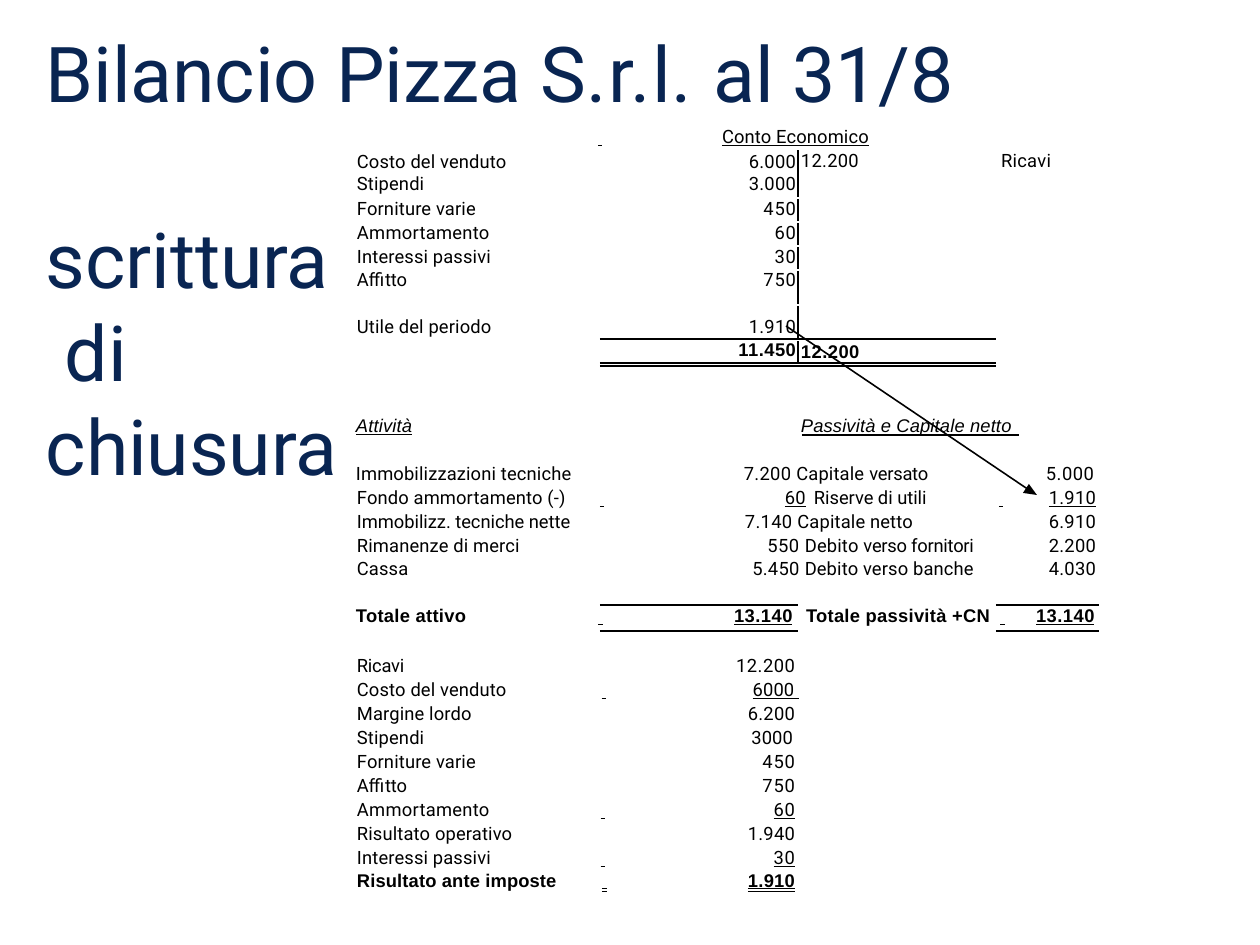
from dataclasses import dataclass

from lxml import etree
from pptx import Presentation
from pptx.dml.color import RGBColor
from pptx.enum.shapes import MSO_CONNECTOR as Conn
from pptx.enum.text import MSO_UNDERLINE as Line, PP_ALIGN as Al
from pptx.oxml.ns import qn
from pptx.util import Emu, Pt

COLORS = {"navy": "092552", "black": "000000"}


def px(n):
    """Turn pixels into EMU."""
    return Emu(round(n * 914400 / 126))


def rgb(name):
    """Look up a colour by name."""
    return RGBColor.from_string(COLORS[name])


@dataclass
class Cell:
    """Text of a table cell with its own layout."""
    text: object = ""
    spc: float = 0.1
    style: str = ""
    left: int = None
    right: int = None
    top: int = 0
    sb: float = 0.1
    tabs: tuple = ()
    align: object = None


class Sheet:
    """Style and current slide, with a method for each kind of element."""

    def __init__(self, slide):
        self.shapes = slide.shapes

    def fill(self, tf, text, size=10.5, color="black", style="", spc=0.1,
             align=Al.LEFT, ls=None, sb=1.4, tabs=()):
        """Write runs, given as a string or as (text, spacing, style) tuples."""
        paras = [text] if isinstance(text, list) else [[(t, spc, style)] for t in text.split("\n")]
        for i, runs in enumerate(paras):
            p = tf.paragraphs[0] if i == 0 else tf.add_paragraph()
            p.alignment, p.space_before = align, Pt(sb)
            if ls:
                p.line_spacing = Pt(ls)
            if tabs:
                lst = etree.SubElement(p._p.get_or_add_pPr(), qn("a:tabLst"))
                for pos in tabs:
                    etree.SubElement(lst, qn("a:tab"), pos=str(px(pos)), algn="l")
            p._p.get_or_add_endParaRPr().set("sz", str(int(size * 100)))
            for words, gap, marks in runs:
                if words:
                    self.run(p, words, gap, marks, size, color)

    def run(self, p, words, gap, marks, size, color):
        """Add one run; bold and italic text is in Arial."""
        r = p.add_run()
        r.text = words
        f = r.font
        f.size, f.color.rgb = Pt(size), rgb(color)
        f.name = "Arial" if set(marks) & set("bi") else "Roboto"
        f.bold, f.italic = "b" in marks, "i" in marks
        f.underline = Line.DOUBLE_LINE if "d" in marks else "u" in marks
        r._r.get_or_add_rPr().set("spc", str(round(gap * 100)))

    def box(self, x, y, w, h, text, top=2, **style):
        """Add a text box."""
        tf = self.shapes.add_textbox(px(x), px(y), px(w), px(h)).text_frame
        tf.word_wrap = True
        tf.margin_left, tf.margin_top = px(1), px(top)
        tf.margin_right = tf.margin_bottom = 0
        self.fill(tf, text, **style)

    def table(self, x, y, cols, rows, border=None):
        """Add a table; cols are (width, align, left, right), rows are (height, leading, cells)."""
        frame = self.shapes.add_table(len(rows), len(cols), px(x), px(y),
                                      px(sum(c[0] for c in cols)), px(sum(r[0] for r in rows)))
        tbl = frame.table
        tbl.first_row = tbl.horz_banding = False
        for col, (w, *_) in zip(tbl.columns, cols):
            col.width = px(w)
        for row, (h, ls, items) in zip(tbl.rows, rows):
            row.height = px(h)
            for j, (cell, item, (_, align, left, right)) in enumerate(zip(row.cells, items, cols)):
                c = item if isinstance(item, Cell) else Cell(item)
                cell.margin_left = px(left if c.left is None else c.left)
                cell.margin_right = px(right if c.right is None else c.right)
                cell.margin_top, cell.margin_bottom = px(c.top), 0
                self.fill(cell.text_frame, c.text, style=c.style, spc=c.spc, ls=ls, sb=c.sb,
                          align=c.align or align, tabs=c.tabs)
                if j == border:
                    self.right_border(cell)
                cell.fill.background()

    def right_border(self, cell):
        """Draw a thin line on the right of a cell."""
        ln = etree.SubElement(cell._tc.get_or_add_tcPr(), qn("a:lnR"), w=str(Pt(1)))
        solid = etree.SubElement(ln, qn("a:solidFill"))
        etree.SubElement(solid, qn("a:srgbClr"), val=COLORS["black"])

    def line(self, x1, y1, x2, y2):
        """Add a straight line."""
        sp = self.shapes.add_connector(Conn.STRAIGHT, px(x1), px(y1), px(x2), px(y2))
        sp.line.color.rgb, sp.line.width = rgb("black"), Pt(0.9)
        etree.SubElement(sp._element.spPr, qn("a:effectLst"))

    def polygon(self, start, *points):
        """Add a filled outline."""
        b = self.shapes.build_freeform(*start, scale=914400 / 126)
        b.add_line_segments(points, close=True)
        sp = b.convert_to_shape()
        sp.shadow.inherit = False
        sp.fill.solid()
        sp.fill.fore_color.rgb = rgb("black")
        sp.line.fill.background()


def main():
    """Build the slide."""
    prs = Presentation()
    prs.slide_width, prs.slide_height = px(1260), px(945)
    s = Sheet(prs.slides.add_slide(prs.slide_layouts[6]))

    big = dict(size=44, color="navy", sb=0.9)
    s.box(45, 25, 979, 96, [("Bilancio Pizza ", -0.1, ""), ("S.r.l. ", 0.6, ""),
                            ("al 31/8", -0.1, "")], top=1, **big)
    s.box(45, 117, 295, 373, "scrittura\n di\nchiusura", top=94, spc=-0.1, **big)

    s.table(353, 151, [(247, Al.LEFT, 4, 0), (198, Al.RIGHT, 0, 2)], [
        (47, 12.4, ["Costo del venduto\nStipendi", Cell("6.000\n3.000", 0.2)]),
        (24, 12.5, ["Forniture varie", Cell("450", 0.5)]),
        (24, 12.6, [Cell("Ammortamento", 0.2), Cell("60", 0.5)]),
        (24, 12.6, ["Interessi passivi", Cell("30", 0.5)]),
        (35, None, [Cell("Affitto", -0.1), Cell("750", 0.5)]),
        (35, 12.2, [Cell("Utile del periodo", top=12, sb=6.8),
                    Cell("1.910", 0.2, top=12, sb=6.8)]),
        (25, None, ["", Cell("11.450", 0.3, "b", sb=0.3)]),
    ], border=1)

    s.box(800, 147, 256, 26, "12.200\tRicavi", spc=0.2, tabs=(200,))
    s.box(800, 338, 70, 26, "12.200", style="b", spc=0.3)
    s.box(355, 412, 70, 26, "Attività", style="iu")
    s.box(800, 412, 230, 26, "Passività e Capitale netto", style="i")
    s.box(355, 460, 225, 26, "Immobilizzazioni tecniche")
    s.box(743, 460, 200, 26, [("7.200 ", 0.2, ""), ("Capitale ", 0.1, ""), ("versato", -0.1, "")])
    s.box(1045, 460, 56, 26, "5.000", spc=0.3)

    s.table(353, 488, [(234, Al.LEFT, 4, 0), (398, Al.RIGHT, 0, 11), (115, Al.RIGHT, 0, 4)], [
        (23, 11.8, ["Fondo ammortamento (-)",
                    Cell([(" \t60", 0.1, "u"), ("\tRiserve di utili", 0, "")],
                         left=13, tabs=(185, 214), align=Al.LEFT),
                    Cell([(" \t", 0, "u"), ("1.910", 0.2, "u")], tabs=(50,))]),
        (24, 12.6, [Cell("Immobilizz. tecniche nette", 0),
                    Cell([("7.140 ", 0.2, ""), ("Capitale netto", 0.1, "")],
                         left=158, align=Al.LEFT), Cell("6.910", 0.2)]),
        (24, 12.6, ["Rimanenze di merci",
                    Cell([("550 ", 0.3, ""), ("Debito ", 0.1, ""), ("verso fornitori", -0.1, "")]),
                    Cell("2.200", 0.2)]),
        (23, 11.8, ["Cassa", Cell([("5.450 ", 0.2, ""), ("Debito verso banche", 0.1, "")]),
                    Cell("4.030", 0.2)]),
    ])

    s.box(355, 602, 120, 26, "Totale attivo", style="b", spc=0.2)
    s.box(597, 602, 510, 26, [(" \t", 0.1, "bu"), ("13.140", 0.3, "bu"),
                              ("\tTotale passività +CN\t", 0.2, "b"),
                              (" \t", 0.1, "bu"), ("13.140", 0.3, "bu")],
          tabs=(136, 208, 402, 438))

    s.table(353, 656, [(228, Al.LEFT, 4, 0), (222, Al.RIGHT, 0, 8)], [
        (23, 11.8, [Cell("Ricavi", -0.1), Cell("12.200", 0.3)]),
        (24, 12.6, ["Costo del venduto", Cell(" \t6000 ", style="u", right=4, tabs=(151,))]),
        (24, 12.6, ["Margine lordo", Cell("6.200", 0.2)]),
        (24, 12.5, ["Stipendi", Cell("3000", right=10)]),
        (24, 12.6, ["Forniture varie", Cell("450", 0.5)]),
        (24, 12.6, [Cell("Affitto", -0.1), Cell("750", 0.5)]),
        (24, 12.6, [Cell("Ammortamento", 0.2), Cell(" \t60", 0.5, "u", tabs=(173,))]),
        (24, 12.5, ["Risultato operativo", Cell("1.940", 0.2)]),
        (24, 12.6, ["Interessi passivi", Cell(" \t30", 0.5, "u", tabs=(173,))]),
        (23, 11.8, [Cell("Risultato ante imposte", style="b"),
                    Cell(" \t1.910", 0.2, "bd", tabs=(146,))]),
    ])

    s.box(597, 123, 400, 26, [(" \t", 0.2, "u"), ("Conto Economico", 0.1, "u")], tabs=(124,))

    for x1, x2, y in [(802, 1019, 435), (600, 798, 605), (600, 798, 631), (600, 996, 339),
                      (600, 996, 363), (600, 996, 366), (996, 1099, 605), (996, 1099, 631)]:
        s.line(x1, y, x2, y)
    s.line(786, 326, 1029, 490)
    s.polygon((1029, 484), (1023, 493), (1037, 495))

    prs.save("out.pptx")


if __name__ == "__main__":
    main()
